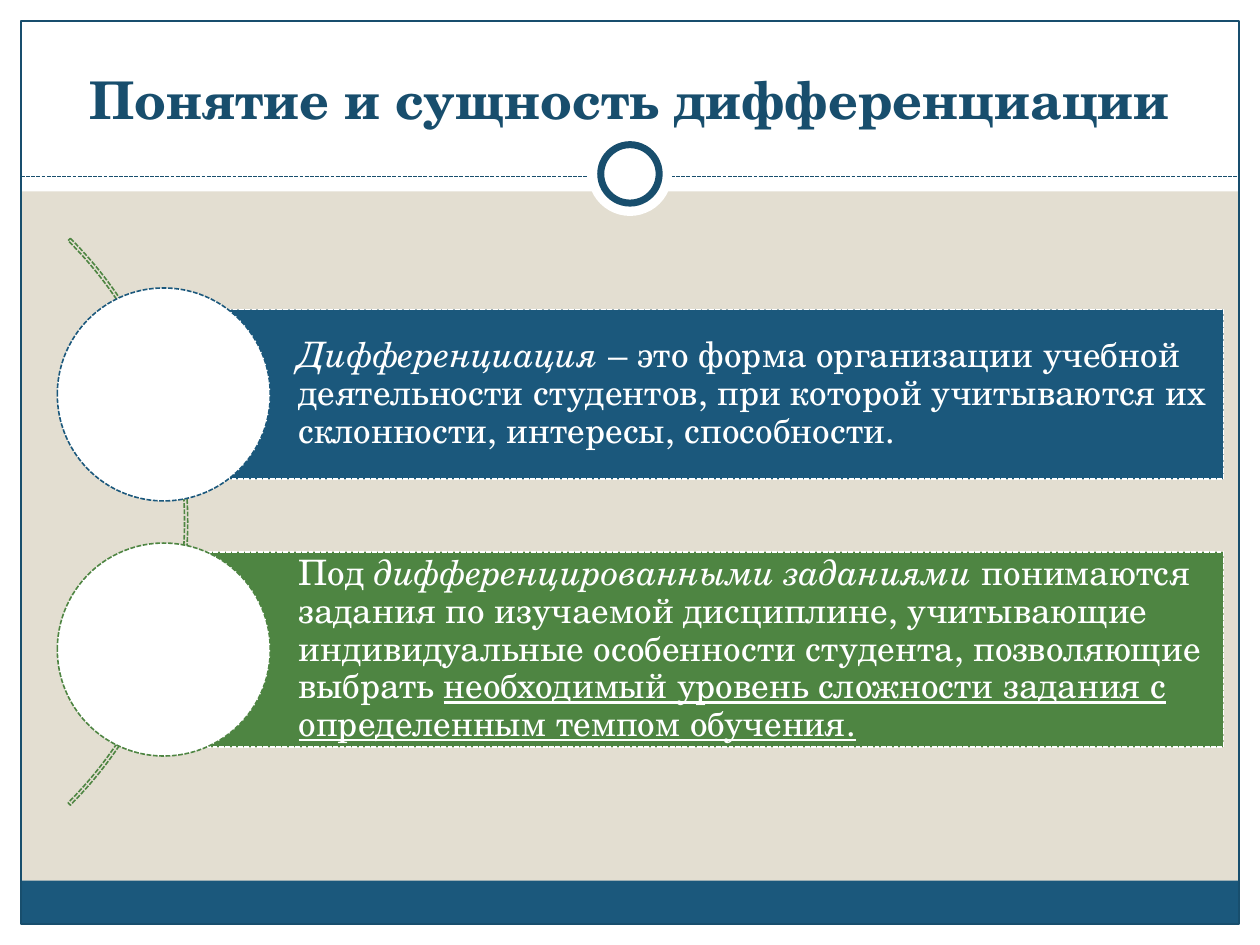
"""Build the slide on the concept of differentiation."""
import pptx
import pptx.util
import pptx.dml.color
import pptx.enum.dml
import pptx.enum.shapes
import pptx.enum.text
import lxml.etree

Pt = pptx.util.Pt
RGBColor = pptx.dml.color.RGBColor
SHAPE = pptx.enum.shapes.MSO_SHAPE
ANCHOR = pptx.enum.text.MSO_ANCHOR
ALIGN = pptx.enum.text.PP_ALIGN

WHITE = RGBColor(0xFF, 0xFF, 0xFF)
SAND = RGBColor(0xE3, 0xDE, 0xD1)
NAVY = RGBColor(0x18, 0x4E, 0x6D)
BLUE = RGBColor(0x1B, 0x58, 0x7C)
GREEN = RGBColor(0x4E, 0x85, 0x42)
FONT = "TeX Gyre Schola"

TITLE = "Понятие и сущность дифференциации"
ITEMS = [
    {"color": BLUE, "middle": 225.4, "height": 97, "spans": [
        ("Дифференциация", "italic"),
        (" – это форма организации учебной деятельности студентов, при которой "
         "учитываются их склонности, интересы, способности.", ""),
    ]},
    {"color": GREEN, "middle": 371.2, "height": 111.6, "spans": [
        ("Под ", ""),
        ("дифференцированными заданиями ", "italic"),
        ("понимаются задания по изучаемой дисциплине, учитывающие индивидуальные "
         "особенности студента, позволяющие выбрать ", ""),
        ("необходимый уровень сложности задания с определенным темпом обучения.",
         "underline"),
    ]},
]

WIDTH, HEIGHT = 720, 540
MARGIN = 12
HEADER = 109.4
RULE_Y = 100.8
RING_Y = 99.4
BAR_LEFT, BAR_WIDTH = 93.6, 605.5
CIRCLE = 121.7
ARC = 458
ARC_CENTER = (-121.7, 298.1)


def style_line(line, color, weight, dashed=False):
    line.color.rgb = color
    line.width = Pt(weight)
    if dashed:
        line.dash_style = pptx.enum.dml.MSO_LINE.SQUARE_DOT


def add_shape(page, kind, frame, fill=None, line=None):
    shape = page.shapes.add_shape(kind, *map(Pt, frame))
    shape.shadow.inherit = False
    if fill is None:
        shape.fill.background()
    else:
        shape.fill.solid()
        shape.fill.fore_color.rgb = fill
    if line is None:
        shape.line.fill.background()
    else:
        style_line(shape.line, *line)
    return shape


def add_round(page, kind, center, size, fill=None, line=None):
    x, y = center
    return add_shape(page, kind, (x - size / 2, y - size / 2, size, size), fill, line)


def style_span(span, size, color):
    span.font.name = FONT
    span.font.size = Pt(size)
    span.font.color.rgb = color


def add_background(page):
    page.background.fill.solid()
    page.background.fill.fore_color.rgb = SAND
    inner_width, inner_height = WIDTH - 2 * MARGIN, HEIGHT - 2 * MARGIN
    bands = [
        ((0, HEIGHT - MARGIN, WIDTH, MARGIN), WHITE),
        ((0, 0, WIDTH, HEADER), WHITE),
        ((0, 0, MARGIN, HEIGHT), WHITE),
        ((WIDTH - MARGIN, 0, MARGIN, HEIGHT), WHITE),
        ((MARGIN, 503.3, inner_width, 24.5), BLUE),
    ]
    for frame, fill in bands:
        add_shape(page, SHAPE.RECTANGLE, frame, fill)
    add_shape(page, SHAPE.RECTANGLE, (MARGIN, MARGIN, inner_width, inner_height),
              line=(NAVY, 0.75))
    rule = page.shapes.add_connector(
        pptx.enum.shapes.MSO_CONNECTOR.STRAIGHT,
        Pt(MARGIN), Pt(RULE_Y), Pt(WIDTH - MARGIN), Pt(RULE_Y))
    style_line(rule.line, NAVY, 0.75, True)
    properties = rule._element.spPr
    lxml.etree.SubElement(properties, pptx.oxml.ns.qn("a:effectLst"))
    center = (WIDTH / 2, RING_Y)
    add_round(page, SHAPE.OVAL, center, 48, WHITE)
    add_round(page, SHAPE.OVAL, center, 33.4, WHITE, (NAVY, 4))


def add_title(page):
    box = page.shapes.add_textbox(Pt(24), Pt(18), Pt(WIDTH - 48), Pt(60))
    box.text_frame.word_wrap = True
    box.text_frame.vertical_anchor = ANCHOR.BOTTOM
    para = box.text_frame.paragraphs[0]
    para.text = TITLE
    para.alignment = ALIGN.CENTER
    span = para.runs[0]
    style_span(span, 29.7, NAVY)
    span.font.bold = True


def add_item(page, item):
    top = item["middle"] - item["height"] / 2
    bar = add_shape(page, SHAPE.RECTANGLE, (BAR_LEFT, top, BAR_WIDTH, item["height"]),
                    item["color"], (WHITE, 0.9, True))
    frame = bar.text_frame
    frame.word_wrap = True
    frame.vertical_anchor = ANCHOR.MIDDLE
    frame.margin_left = Pt(77)
    frame.margin_right = frame.margin_top = frame.margin_bottom = Pt(4)
    para = frame.paragraphs[0]
    para.alignment = ALIGN.LEFT
    para.line_spacing = 0.9
    para.space_after = Pt(7)
    for text, emphasis in item["spans"]:
        span = para.add_run()
        span.text = text
        style_span(span, 20, WHITE)
        span.font.italic = emphasis == "italic"
        span.font.underline = emphasis == "underline"
    add_round(page, SHAPE.OVAL, (BAR_LEFT, item["middle"]), CIRCLE,
              WHITE, (item["color"], 0.9, True))


def main():
    deck = pptx.Presentation()
    deck.slide_width, deck.slide_height = Pt(WIDTH), Pt(HEIGHT)
    page = deck.slides.add_slide(deck.slide_layouts[6])
    add_background(page)
    add_title(page)
    arc = add_round(page, SHAPE.BLOCK_ARC, ARC_CENTER, ARC, line=(GREEN, 0.9, True))
    for index, value in enumerate((189, 27, 0.004)):
        arc.adjustments[index] = value
    for item in ITEMS:
        add_item(page, item)
    deck.save("out.pptx")


if __name__ == "__main__":
    main()
